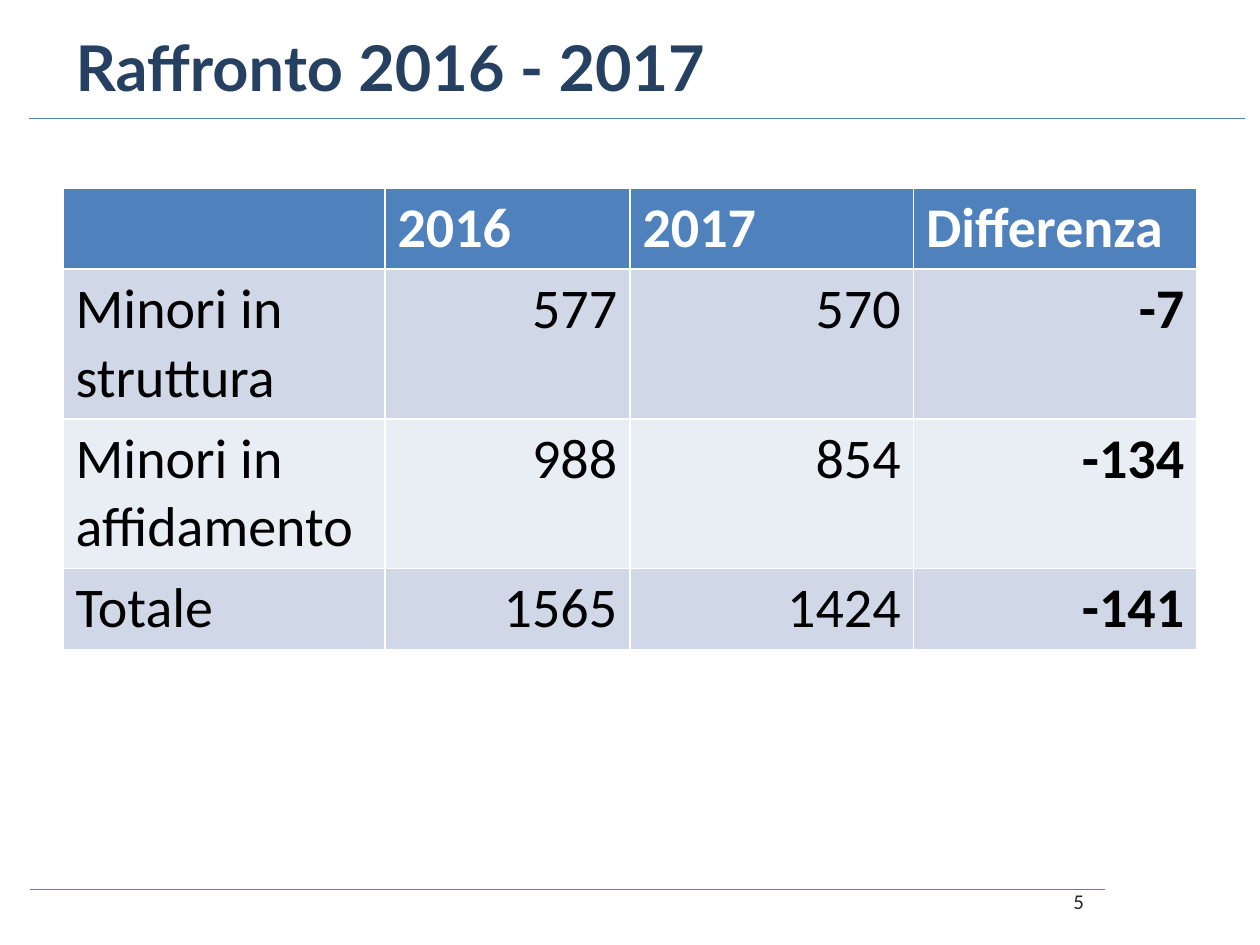
from pptx import Presentation
from pptx.dml.color import RGBColor
from pptx.enum.shapes import MSO_CONNECTOR
from pptx.enum.text import MSO_ANCHOR, MSO_AUTO_SIZE, PP_ALIGN
from pptx.oxml.ns import qn
from pptx.util import Pt
from lxml.etree import SubElement

THEME = {
    "accent": RGBColor.from_string("4F81BD"),
    "title": RGBColor.from_string("254061"),
    "number": RGBColor.from_string("262626"),
    "white": RGBColor.from_string("FFFFFF"),
    "black": RGBColor.from_string("000000"),
    "bands": [RGBColor.from_string("D0D8E8"), RGBColor.from_string("E9EDF4")],
    "title_font": "Lato",
    "body_font": "Calibri",
    "title_size": Pt(36),
    "table_size": Pt(32),
    "number_size": Pt(12),
}


def write(frame, text, color, align=PP_ALIGN.LEFT, **font_format):
    paragraph = frame.paragraphs[0]
    paragraph.text = text
    paragraph.alignment = align
    paragraph.font.color.rgb = color
    for key, value in font_format.items():
        setattr(paragraph.font, key, value)


deck = Presentation()
deck.slide_width, deck.slide_height = Pt(720), Pt(540)
slide = deck.slides.add_slide(deck.slide_layouts[5])

# Rules above and below the content
for left, right, y in [(16.5, 711.5, 67.7), (17.3, 631.5, 508.3)]:
    rule = slide.shapes.add_connector(
        MSO_CONNECTOR.STRAIGHT, Pt(left), Pt(y), Pt(right), Pt(y))
    rule.line.color.rgb = THEME["accent"]
    rule.line.width = Pt(0.75)
    SubElement(rule._element.spPr, qn("a:effectLst"))

# Title
title = slide.shapes.title
title.left, title.top, title.width, title.height = Pt(36), Pt(11.5), Pt(675), Pt(52.5)
title.text_frame.auto_size = MSO_AUTO_SIZE.NONE
title.text_frame.vertical_anchor = MSO_ANCHOR.MIDDLE
write(title.text_frame, "Raffronto 2016 - 2017", THEME["title"],
      name=THEME["title_font"], size=THEME["title_size"], bold=True)

# Comparison table
rows = [
    ("", "2016", "2017", "Differenza"),
    ("Minori in struttura", "577", "570", "-7"),
    ("Minori in affidamento", "988", "854", "-134"),
    ("Totale", "1565", "1424", "-141"),
]
column_widths = [184, 140, 162, 162]
row_heights = [46, 85.4, 85.4, 46]
comparison = slide.shapes.add_table(
    len(rows), len(column_widths), Pt(36), Pt(107.5),
    Pt(sum(column_widths)), Pt(sum(row_heights))).table
for column, width in zip(comparison.columns, column_widths):
    column.width = Pt(width)
for r, (values, height) in enumerate(zip(rows, row_heights)):
    comparison.rows[r].height = Pt(height)
    header = r == 0
    for c, value in enumerate(values):
        cell = comparison.cell(r, c)
        cell.fill.solid()
        cell.fill.fore_color.rgb = THEME["accent"] if header else THEME["bands"][(r - 1) % 2]
        write(cell.text_frame, value,
              THEME["white"] if header else THEME["black"],
              PP_ALIGN.LEFT if header or c == 0 else PP_ALIGN.RIGHT,
              name=THEME["body_font"], size=THEME["table_size"],
              bold=header or c == len(values) - 1)

# Page number
page_number = slide.shapes.add_textbox(Pt(516), Pt(500.5), Pt(110.5), Pt(28.75)).text_frame
page_number.word_wrap = True
page_number.vertical_anchor = MSO_ANCHOR.MIDDLE
write(page_number, "5", THEME["number"], PP_ALIGN.RIGHT,
      name=THEME["body_font"], size=THEME["number_size"])

deck.save("out.pptx")
